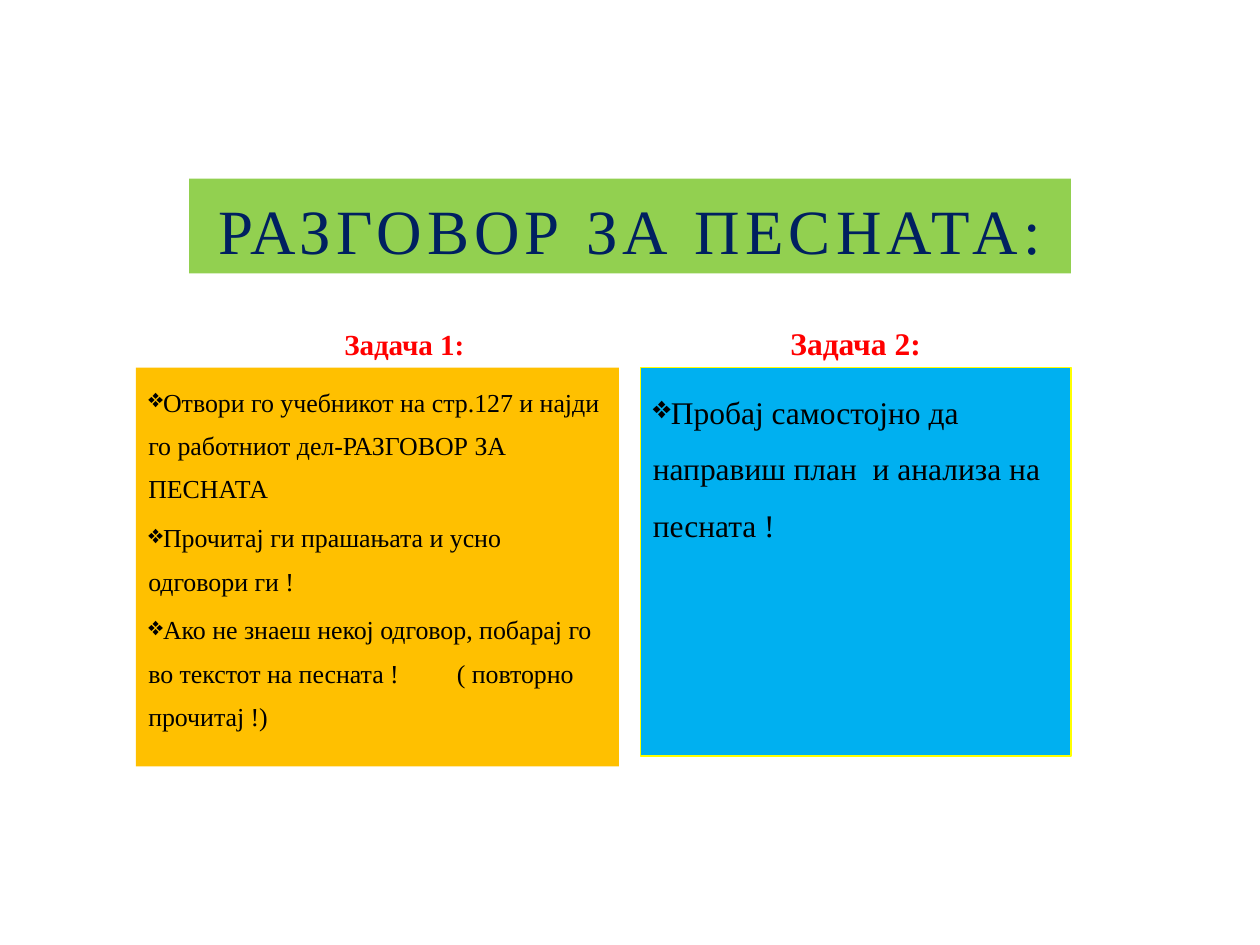
from dataclasses import dataclass
from typing import Optional

import lxml.etree
import pptx
import pptx.dml.color
import pptx.enum.shapes
import pptx.enum.text
import pptx.oxml.ns
import pptx.util

Cm = pptx.util.Cm
Pt = pptx.util.Pt
ALIGN = pptx.enum.text.PP_ALIGN
ANCHOR = pptx.enum.text.MSO_ANCHOR


@dataclass(frozen=True)
class Theme:
    font: str = "Times New Roman"
    title_fill: str = "92D050"
    title_color: str = "002060"
    heading_color: str = "FF0000"
    body_color: str = "000000"
    first_fill: str = "FFC000"
    second_fill: str = "00B0F0"
    second_line: str = "FFFF00"
    title_size: float = 36
    title_spacing: int = 300
    first_heading_size: float = 16.6
    first_body_size: float = 14.8
    second_size: float = 18


@dataclass(frozen=True)
class Area:
    left: float
    top: float
    width: float
    height: float

    def lengths(self) -> tuple:
        return Cm(self.left), Cm(self.top), Cm(self.width), Cm(self.height)


@dataclass(frozen=True)
class Task:
    heading: str
    heading_area: Area
    heading_size: float
    items: tuple
    body_area: Area
    body_size: float
    line_spacing: float
    fill: str
    line: Optional[str] = None


THEME = Theme()
TITLE_AREA = Area(3.81, 3.6, 17.78, 1.91)
TAB_STOP = Cm(6.22)

TASKS = (
    Task(
        "Задача 1:", Area(3.81, 6.14, 8.68, 1.27), THEME.first_heading_size,
        ("Отвори го учебникот на стр.127 и најди го работниот дел-РАЗГОВОР ЗА ПЕСНАТА",
         "Прочитај ги прашањата и усно одговори ги !",
         "Ако не знаеш некој одговор, побарај го во текстот на песната !\t( повторно прочитај !)"),
        Area(2.74, 7.41, 9.74, 8.04), THEME.first_body_size, 1.4, THEME.first_fill,
    ),
    Task(
        "Задача 2:", Area(12.91, 5.93, 8.68, 1.48), THEME.second_size,
        ("Пробај самостојно да направиш план  и анализа на песната !",),
        Area(12.91, 7.41, 8.68, 7.83), THEME.second_size, 1.5,
        THEME.second_fill, THEME.second_line,
    ),
)


def color(value: str) -> pptx.dml.color.RGBColor:
    return pptx.dml.color.RGBColor.from_string(value)


def style_para(para, size: float, text_color: str, bold: bool = False) -> None:
    for span in para.runs:
        span.font.name = THEME.font
        span.font.size = Pt(size)
        span.font.bold = bold
        span.font.color.rgb = color(text_color)


def prepare_frame(box, anchor):
    frame = box.text_frame
    frame.word_wrap = True
    frame.auto_size = pptx.enum.text.MSO_AUTO_SIZE.NONE
    frame.vertical_anchor = anchor
    return frame


def add_bullet(para, has_tab: bool) -> None:
    properties = para._p.get_or_add_pPr()
    properties.set("marL", "0")
    properties.set("indent", str(-Cm(0.76)))
    qn = pptx.oxml.ns.qn
    lxml.etree.SubElement(properties, qn("a:buChar"), char="❖")
    if has_tab:
        tabs = lxml.etree.SubElement(properties, qn("a:tabLst"))
        lxml.etree.SubElement(tabs, qn("a:tab"), pos=str(TAB_STOP), algn="l")


def draw_title(slide) -> None:
    title = slide.shapes.title
    title.left, title.top, title.width, title.height = TITLE_AREA.lengths()
    title.fill.solid()
    title.fill.fore_color.rgb = color(THEME.title_fill)
    frame = prepare_frame(title, ANCHOR.BOTTOM)
    frame.text = "РАЗГОВОР ЗА ПЕСНАТА:"
    para = frame.paragraphs[0]
    para.alignment = ALIGN.CENTER
    style_para(para, THEME.title_size, THEME.title_color)
    para.runs[0].font._element.set("spc", str(THEME.title_spacing))


def draw_heading(slide, task: Task) -> None:
    box = slide.shapes.add_textbox(*task.heading_area.lengths())
    frame = prepare_frame(box, ANCHOR.BOTTOM)
    frame.text = task.heading
    para = frame.paragraphs[0]
    para.alignment = ALIGN.CENTER
    para.line_spacing = task.line_spacing
    style_para(para, task.heading_size, THEME.heading_color, bold=True)


def draw_body(slide, task: Task) -> None:
    box = slide.shapes.add_shape(
        pptx.enum.shapes.MSO_SHAPE.RECTANGLE, *task.body_area.lengths())
    box.shadow.inherit = False
    box.fill.solid()
    box.fill.fore_color.rgb = color(task.fill)
    if task.line:
        box.line.color.rgb = color(task.line)
        box.line.width = Pt(0.75)
    else:
        box.line.fill.background()
    frame = prepare_frame(box, ANCHOR.TOP)
    for index, item in enumerate(task.items):
        para = frame.add_paragraph() if index else frame.paragraphs[0]
        para.text = item
        add_bullet(para, "\t" in item)
        para.alignment = ALIGN.LEFT
        para.line_spacing = task.line_spacing
        if index:
            para.space_before = Pt(round(task.body_size * 0.2, 1))
        style_para(para, task.body_size, THEME.body_color)


def main() -> None:
    deck = pptx.Presentation()
    deck.slide_width, deck.slide_height = Cm(25.4), Cm(19.05)
    page = deck.slides.add_slide(deck.slide_layouts[5])

    # Title band
    draw_title(page)

    # Two tasks, each a heading above a coloured panel
    for task in TASKS:
        draw_body(page, task)
        draw_heading(page, task)

    deck.save("out.pptx")


if __name__ == "__main__":
    main()
